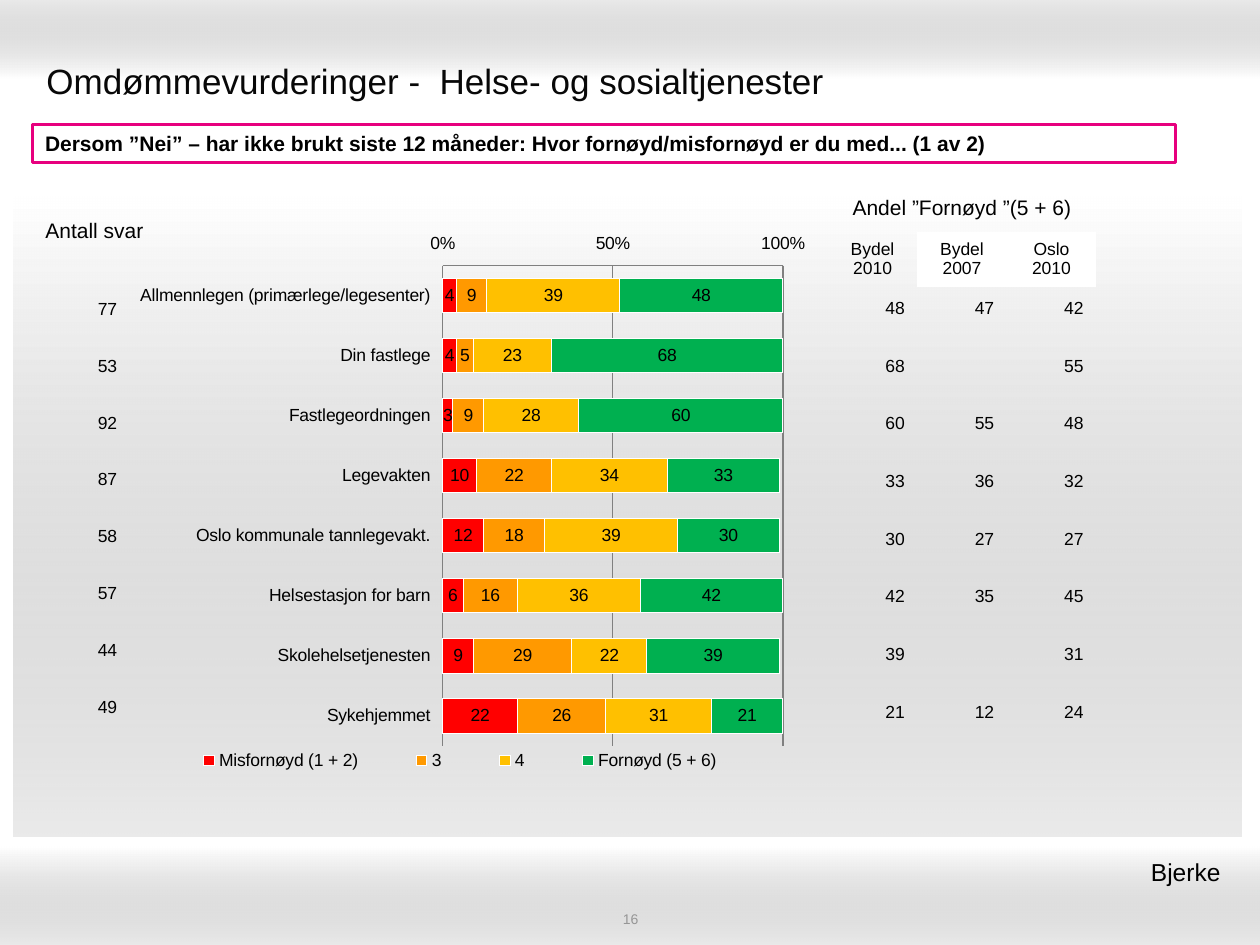
from pptx import Presentation
from pptx.chart.data import CategoryChartData
from pptx.dml.color import RGBColor
from pptx.enum.chart import XL_CHART_TYPE, XL_LEGEND_POSITION, XL_TICK_LABEL_POSITION, XL_TICK_MARK
from pptx.enum.shapes import MSO_SHAPE
from pptx.enum.text import MSO_ANCHOR, PP_ALIGN
from pptx.oxml import parse_xml
from pptx.oxml.ns import nsdecls, qn
from pptx.util import Inches, Pt

COLUMNS, ROWS = 100, 75
NO_STYLE = "{2D5ABB26-0587-4C30-8999-92F81FD0307C}"

SERVICES = ["Allmennlegen (primærlege/legesenter)", "Din fastlege", "Fastlegeordningen",
            "Legevakten", "Oslo kommunale tannlegevakt.", "Helsestasjon for barn",
            "Skolehelsetjenesten", "Sykehjemmet"]
ANSWERS = [77, 53, 92, 87, 58, 57, 44, 49]
SATISFIED_2010 = [48, 68, 60, 33, 30, 42, 39, 21]
SATISFIED_2007 = [47, "", 55, 36, 27, 35, "", 12]
SATISFIED_OSLO = [42, 55, 48, 32, 27, 45, 31, 24]
RATINGS = [
    ("Misfornøyd (1 + 2)", "FF0000", [4, 4, 3, 10, 12, 6, 9, 22]),
    ("3", "FF9900", [9, 5, 9, 22, 18, 16, 29, 26]),
    ("4", "FFC000", [39, 23, 28, 34, 39, 36, 22, 31]),
    ("Fornøyd (5 + 6)", "00B050", SATISFIED_2010),
]


def rgb(value):
    return RGBColor.from_string(value)


class SlideBuilder:
    """Holds the style and the slide; boxes are (column, row, columns, rows) of the grid."""
    font, ink, rule = "Arial", "000000", "808080"

    def __init__(self, deck):
        self.column = deck.slide_width / COLUMNS
        self.row = deck.slide_height / ROWS
        self.slide = deck.slides.add_slide(deck.slide_layouts[6])
        self.shapes = self.slide.shapes

    def place(self, box):
        left, top, width, height = box
        return (round(left * self.column), round(top * self.row),
                round(width * self.column), round(height * self.row))

    def style_font(self, font, size, color=None, bold=False):
        font.name, font.size, font.bold = self.font, Pt(size), bold
        font.color.rgb = rgb(color or self.ink)

    def add_lines(self, frame, text, size, align=PP_ALIGN.LEFT, color=None, bold=False):
        for index, line in enumerate(text.split("\n")):
            paragraph = frame.paragraphs[0] if index == 0 else frame.add_paragraph()
            paragraph.alignment = align
            run = paragraph.add_run()
            run.text = line
            self.style_font(run.font, size, color, bold)

    def band(self, box, angle):
        band = self.shapes.add_shape(MSO_SHAPE.RECTANGLE, *self.place(box))
        band.shadow.inherit = False
        band.line.fill.background()
        band.fill.background()
        properties = band._element.spPr
        gradient = parse_xml(
            f'<a:gradFill {nsdecls("a")} rotWithShape="1"><a:gsLst>'
            '<a:gs pos="0"><a:srgbClr val="FFFFFF"/></a:gs>'
            '<a:gs pos="100000"><a:srgbClr val="999999"><a:alpha val="20000"/></a:srgbClr></a:gs>'
            f'</a:gsLst><a:lin ang="{angle * 60000}" scaled="1"/></a:gradFill>')
        properties.replace(properties.find(qn("a:noFill")), gradient)

    def text(self, box, text, size, anchor=MSO_ANCHOR.TOP, **style):
        frame = self.shapes.add_textbox(*self.place(box)).text_frame
        frame.word_wrap = True
        frame.vertical_anchor = anchor
        self.add_lines(frame, text, size, **style)

    def framed_text(self, box, text, size, border):
        panel = self.shapes.add_shape(MSO_SHAPE.RECTANGLE, *self.place(box))
        panel.shadow.inherit = False
        panel.fill.solid()
        panel.fill.fore_color.rgb = rgb("FFFFFF")
        panel.line.color.rgb = rgb(border)
        panel.line.width = Pt(2)
        panel.text_frame.word_wrap = True
        panel.text_frame.vertical_anchor = MSO_ANCHOR.MIDDLE
        self.add_lines(panel.text_frame, text, size, bold=True)

    def table(self, box, cells, align, size=10, heights=()):
        frame = self.shapes.add_table(len(cells), len(cells[0]), *self.place(box))
        table = frame.table
        table.first_row = table.horz_banding = False
        table._tbl.tblPr.find(qn("a:tableStyleId")).text = NO_STYLE
        for index, rows in enumerate(heights):
            table.rows[index].height = round(rows * self.row)
        for r, values in enumerate(cells):
            for c, value in enumerate(values):
                cell = table.cell(r, c)
                cell.fill.background()
                cell.vertical_anchor = MSO_ANCHOR.MIDDLE
                if value == "":
                    cell.text_frame.paragraphs[0].font.size = Pt(size)
                else:
                    self.add_lines(cell.text_frame, str(value), size, align)
        return table

    def set_layout(self, element, x, y, w, h, inner=False):
        old = element.find(qn("c:layout"))
        target = '<c:layoutTarget val="inner"/>' if inner else ""
        layout = parse_xml(
            f'<c:layout {nsdecls("c")}><c:manualLayout>{target}'
            '<c:xMode val="edge"/><c:yMode val="edge"/>'
            f'<c:x val="{x}"/><c:y val="{y}"/><c:w val="{w}"/><c:h val="{h}"/>'
            '</c:manualLayout></c:layout>')
        if old is not None:
            element.remove(old)
        position = element.find(qn("c:legendPos"))
        if position is not None:
            position.addnext(layout)
        else:
            element.insert(0, layout)

    def stacked_bars(self, box, categories, ratings):
        data = CategoryChartData()
        data.categories = categories
        for name, _, values in ratings:
            data.add_series(name, values)
        chart = self.shapes.add_chart(XL_CHART_TYPE.BAR_STACKED, *self.place(box), data).chart
        chart.has_title = False
        self.style_font(chart.font, 10)

        # Bars and their values
        plot = chart.plots[0]
        plot.gap_width, plot.overlap, plot.vary_by_categories = 75, 100, False
        for series, (_, color, _) in zip(plot.series, ratings):
            series.format.fill.solid()
            series.format.fill.fore_color.rgb = rgb(color)
            series.format.line.color.rgb = rgb("FFFFFF")
            labels = series.data_labels
            labels.show_value = True
            labels.number_format, labels.number_format_is_linked = "0", False
            self.style_font(labels.font, 10)

        # Axes
        services, share = chart.category_axis, chart.value_axis
        services.reverse_order = True
        services.major_tick_mark = XL_TICK_MARK.NONE
        share.major_tick_mark = XL_TICK_MARK.INSIDE
        share.minimum_scale, share.maximum_scale, share.major_unit = 0, 100, 50
        share.tick_labels.number_format = "General\\%"
        share.tick_labels.number_format_is_linked = False
        share.major_gridlines.format.line.color.rgb = rgb(self.rule)
        for axis in (services, share):
            axis.tick_label_position = XL_TICK_LABEL_POSITION.LOW
            axis.format.line.color.rgb = rgb(self.rule)
            self.style_font(axis.tick_labels.font, 10)

        # Legend and plot area
        chart.has_legend = True
        chart.legend.position = XL_LEGEND_POSITION.BOTTOM
        chart.legend.include_in_layout = False
        self.style_font(chart.legend.font, 10)
        self.set_layout(chart.legend._element, 0.04, 0.91, 0.89, 0.05)
        self.set_layout(chart._chartSpace.chart.plotArea, 0.46, 0.07, 0.49, 0.84, inner=True)


def main():
    deck = Presentation()
    deck.slide_width, deck.slide_height = Inches(10), Inches(7.5)
    page = SlideBuilder(deck)

    # Shaded background bands
    page.band((0, 0, 100, 6.2), 270)
    page.band((0, 67.2, 100, 7.8), 90)
    page.band((1.1, 15.6, 97.4, 50.8), 90)

    # Heading, page number and question
    page.text((2.7, 3.6, 94.5, 5.5), "Omdømmevurderinger -  Helse- og sosialtjenester", 20,
              MSO_ANCHOR.MIDDLE, color="080808")
    page.text((34.2, 72.2, 31.7, 1.4), "16", 8, MSO_ANCHOR.MIDDLE,
              align=PP_ALIGN.CENTER, color="969696")
    page.framed_text((2.6, 9.9, 90.7, 3), "Dersom ”Nei” – har ikke brukt siste 12 måneder: "
                     "Hvor fornøyd/misfornøyd er du med... (1 av 2)", 12, "E7007E")

    # Ratings per service
    page.stacked_bars((9.8, 17.9, 55.1, 45.4), SERVICES, RATINGS)

    # Share of satisfied users
    page.table((65.7, 22.2, 21.3, 36.6),
               list(zip(SATISFIED_2010, SATISFIED_2007, SATISFIED_OSLO)), PP_ALIGN.RIGHT)
    heading = page.table((65.7, 14.7, 21.3, 8),
                         [["", "", ""], ["Bydel\n2010", "Bydel\n2007", "Oslo\n2010"]],
                         PP_ALIGN.CENTER, heights=[3.7, 4.3])
    heading.cell(0, 0).merge(heading.cell(0, 2))
    page.add_lines(heading.cell(0, 0).text_frame, "Andel ”Fornøyd ”(5 + 6)", 12, PP_ALIGN.CENTER)
    for column in (1, 2):
        comparison = heading.cell(1, column)
        comparison.fill.solid()
        comparison.fill.fore_color.rgb = rgb("FFFFFF")

    # Number of answers
    page.table((5.1, 22.3, 5.2, 36.1), [[count] for count in ANSWERS], PP_ALIGN.RIGHT)
    page.table((0.4, 15.4, 14.2, 5.9), [["Antall svar"]], PP_ALIGN.CENTER, size=12)

    # District
    page.text((61, 67.5, 37.4, 3.4), "Bjerke ", 14, align=PP_ALIGN.RIGHT)
    deck.save("out.pptx")


if __name__ == "__main__":
    main()
